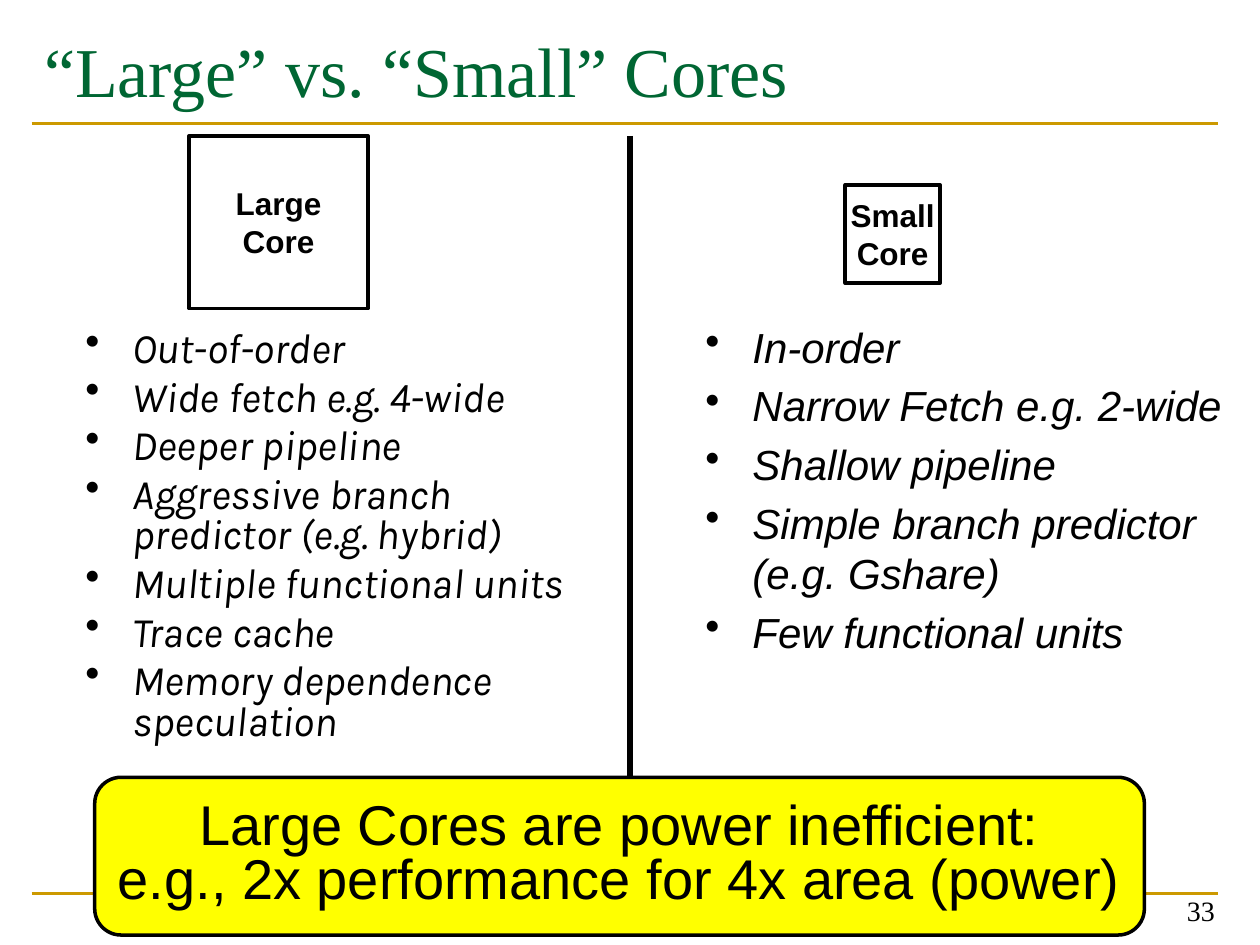
from lxml import etree
from pptx import Presentation
from pptx.dml.color import RGBColor
from pptx.enum.shapes import MSO_CONNECTOR, MSO_SHAPE
from pptx.enum.text import MSO_ANCHOR, PP_ALIGN
from pptx.oxml.ns import qn
from pptx.util import Cm, Pt

LINE = MSO_CONNECTOR.STRAIGHT
RECT, ROUND = MSO_SHAPE.RECTANGLE, MSO_SHAPE.FLOWCHART_ALTERNATE_PROCESS
TOP, MID, BASE = MSO_ANCHOR.TOP, MSO_ANCHOR.MIDDLE, MSO_ANCHOR.BOTTOM
LEFT, MIDST, RIGHT = PP_ALIGN.LEFT, PP_ALIGN.CENTER, PP_ALIGN.RIGHT


class Theme:
    green = RGBColor(0x00, 0x66, 0x33)
    gold = RGBColor(0xCC, 0x99, 0x00)
    black = RGBColor(0, 0, 0)
    yellow = RGBColor(0xFF, 0xFF, 0)
    serif, sans, hand = "Times New Roman", "Arial", "Karla"
    title, claim, body, label, page = Pt(40), Pt(32), Pt(24), Pt(18), Pt(16)


def write(shape, texts, face, size, color=Theme.black, align=LEFT,
          anchor=TOP, wrap=True):
    """Fill a shape with paragraphs of one style and return them."""
    frame = shape.text_frame
    frame.word_wrap = wrap
    frame.vertical_anchor = anchor
    frame.text = "\n".join(texts)
    for par in frame.paragraphs:
        par.alignment = align
        par.font.name, par.font.size = face, size
        par.font.color.rgb = color
    return frame.paragraphs


def rule(x1, y1, x2, y2, color, width):
    """Draw a plain straight line."""
    line = slide.shapes.add_connector(LINE, Cm(x1), Cm(y1), Cm(x2), Cm(y2))
    line.line.color.rgb = color
    line.line.width = Pt(width)
    etree.SubElement(line._element.spPr, qn("a:effectLst"))


deck = Presentation()
deck.slide_width, deck.slide_height = Cm(25.4), Cm(19.05)
slide = deck.slides.add_slide(deck.slide_layouts[6])
shapes = slide.shapes

# Gold rules, title and page number
for y in (18.01, 2.49):
    rule(0.64, y, 24.56, y, Theme.gold, 1.5)
title = shapes.add_textbox(Cm(0.64), Cm(0.43), Cm(23.93), Cm(2.97))
write(title, ["“Large” vs. “Small” Cores"], Theme.serif, Theme.title, Theme.green)
page = shapes.add_textbox(Cm(18.82), Cm(17.55), Cm(5.92), Cm(1.27))
write(page, ["33"], Theme.serif, Theme.page, align=RIGHT, anchor=BASE)

# Bullet lists: place, face, line spacing, items
lists = [
    ((1.47, 6.55, 10.59, 9.78), Theme.hand, 0.8, [
        "Out-of-order", "Wide fetch e.g. 4-wide", "Deeper pipeline",
        "Aggressive branch predictor (e.g. hybrid)",
        "Multiple functional units", "Trace cache",
        "Memory dependence speculation"]),
    ((13.97, 6.35, 11.43, 7.62), Theme.sans, 1.0, [
        "In-order", "Narrow Fetch e.g. 2-wide", "Shallow pipeline",
        "Simple branch predictor (e.g. Gshare)", "Few functional units"]),
]
for place, face, gap, items in lists:
    box = shapes.add_textbox(*map(Cm, place))
    for par in write(box, items, face, Theme.body):
        par.font.italic = True
        par.line_spacing, par.space_before = gap, Pt(4.8)
        props = par._p.get_or_add_pPr()
        props.set("marL", str(Cm(0.95)))
        props.set("indent", str(-Cm(0.95)))
        mark = etree.Element(qn("a:buChar"), char="•")
        props.find(qn("a:defRPr")).addprevious(mark)

# Divider between the two sides
rule(12.7, 2.74, 12.7, 16.38, Theme.black, 3)

# Core boxes and the claim below: kind, place, fill, text, size
blocks = [
    (RECT, (3.81, 2.74, 3.61, 3.48), None, "Large\vCore", Theme.label),
    (RECT, (17.04, 3.73, 1.91, 1.98), None, "Small\vCore", Theme.label),
    (ROUND, (1.91, 15.67, 21.16, 3.18), Theme.yellow,
     "Large Cores are power inefficient:\v"
     "e.g., 2x performance for 4x area (power)", Theme.claim),
]
for kind, place, fill, text, size in blocks:
    block = shapes.add_shape(kind, *map(Cm, place))
    block.shadow.inherit = False
    block.line.color.rgb = Theme.black
    block.line.width = Pt(2)
    par = write(block, [text], Theme.sans, size, align=MIDST, anchor=MID,
                wrap=False)[0]
    if fill is None:
        block.fill.background()
        par.font.bold = True
    else:
        block.fill.solid()
        block.fill.fore_color.rgb = fill
        par.line_spacing, par.space_before = 0.8, Pt(6.4)

deck.save("out.pptx")
